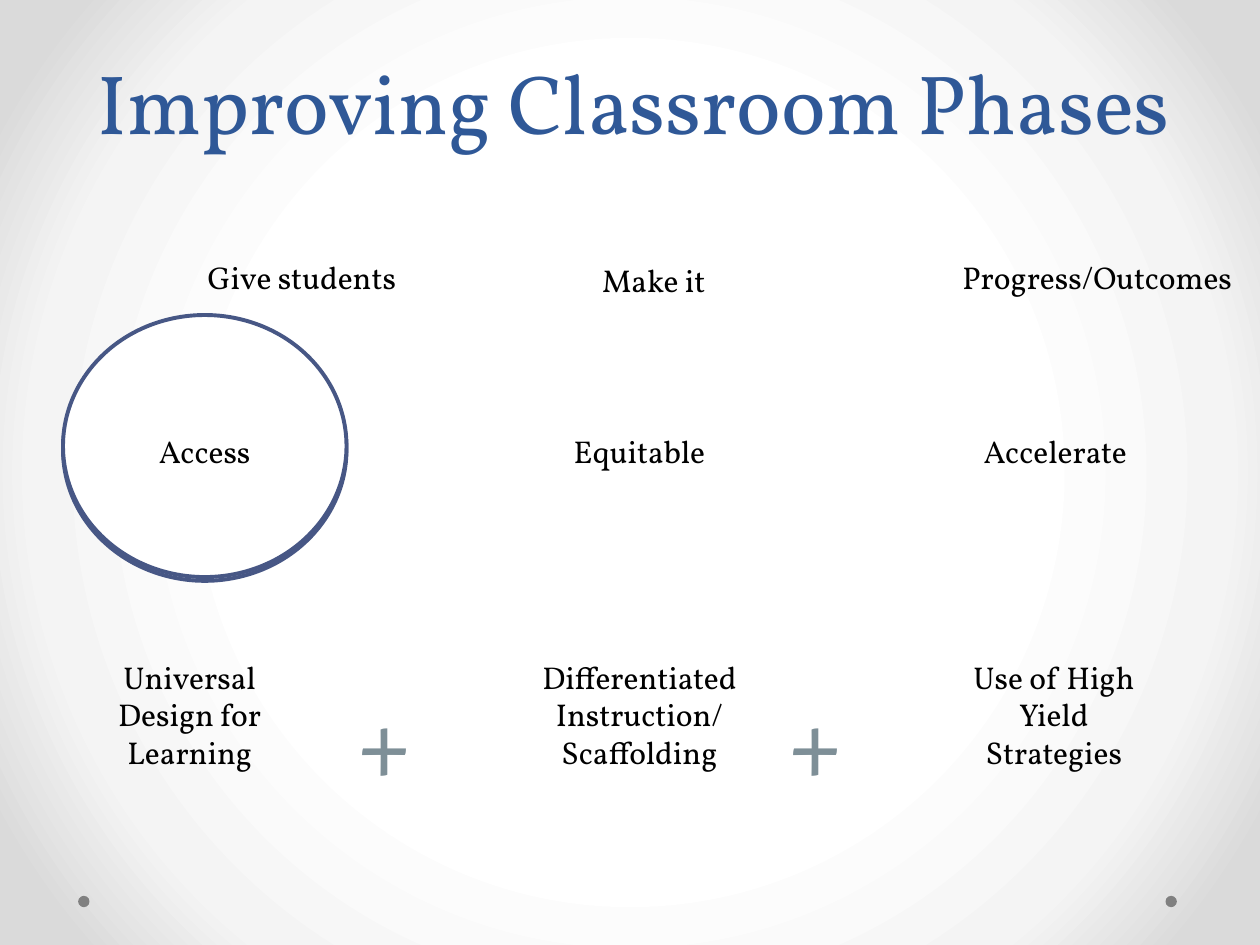
from pptx import Presentation
from pptx.dml.color import RGBColor
from pptx.enum.shapes import MSO_SHAPE
from pptx.enum.text import MSO_ANCHOR, PP_ALIGN
from pptx.oxml import parse_xml
from pptx.oxml.ns import nsdecls
from pptx.util import Inches, Pt

# Content
FONT = "Vollkorn"
TITLE = "Improving Classroom Phases"
BACKGROUND_STOPS = [(50, "FFFFFF"), (76, "F4F4F4"), (92, "DADADA")]

# Text, left, top, width
HEADINGS = [
    ("Give students", 1.55, 2, 1.82),
    ("Make it", 4.68, 2.02, 1.42),
    ("Progress/Outcomes", 7.54, 2, 2.42),
]
# Text, left
PHASES = [("Access", 0.79), ("Equitable", 4.24), ("Accelerate", 7.54)]
# Text, left, width
METHODS = [
    ("Universal Design for Learning", 0.67, 1.67),
    ("Differentiated Instruction/ Scaffolding", 4.09, 1.97),
    ("Use of High Yield Strategies", 7.53, 1.67),
]
PLUS_LEFTS = [2.75, 6.17]
DOT_LEFTS = [0.62, 9.25]
CIRCLE_TOPS = [2.53, 2.5]


def color(value):
    return RGBColor.from_string(value)


def add_text(text, left, top, width, height, size=18, text_color="000000",
             align=PP_ALIGN.CENTER, bold=False, wrap=True):
    box = slide.shapes.add_textbox(
        Inches(left), Inches(top), Inches(width), Inches(height))
    frame = box.text_frame
    frame.word_wrap = wrap
    paragraph = frame.paragraphs[0]
    paragraph.alignment = align
    run = paragraph.add_run()
    run.text = text
    run.font.name = FONT
    run.font.size = Pt(size)
    run.font.bold = bold
    run.font.color.rgb = color(text_color)
    return frame


def add_ellipse(left, top, width, height, fill, line=None):
    shape = slide.shapes.add_shape(
        MSO_SHAPE.OVAL, Inches(left), Inches(top), Inches(width), Inches(height))
    shape.shadow.inherit = False
    shape.fill.solid()
    shape.fill.fore_color.rgb = color(fill)
    if line:
        shape.line.color.rgb = color(line)
        shape.line.width = Pt(2.25)
    else:
        shape.line.fill.background()


def set_radial_background(stops):
    slide.background.fill.gradient()
    old_fill = slide.background._cSld.bg.bgPr[0]
    stop_xml = "".join(
        f'<a:gs pos="{position * 1000}"><a:srgbClr val="{value}"/></a:gs>'
        for position, value in stops)
    new_fill = parse_xml(
        f'<a:gradFill {nsdecls("a")} rotWithShape="1"><a:gsLst>{stop_xml}</a:gsLst>'
        '<a:path path="circle"><a:fillToRect l="50000" t="50000" r="50000" b="50000"/>'
        '</a:path></a:gradFill>')
    old_fill.getparent().replace(old_fill, new_fill)


presentation = Presentation()
presentation.slide_width = Inches(10)
presentation.slide_height = Inches(7.5)
slide = presentation.slides.add_slide(presentation.slide_layouts[6])

# Background and corner dots
set_radial_background(BACKGROUND_STOPS)
for left in DOT_LEFTS:
    add_ellipse(left, 7.11, 0.09, 0.09, "808080")

# Title
title = add_text(TITLE, 0.28, 0.25, 9.5, 1, size=48, text_color="2F5897")
title.vertical_anchor = MSO_ANCHOR.BOTTOM
title.paragraphs[0].line_spacing = Pt(58)

# Doubled circle behind the first phase
for top in CIRCLE_TOPS:
    add_ellipse(0.5, top, 2.25, 2.08, "FFFFFF", line="475785")

# Three columns of phases and methods
for text, left in PHASES:
    add_text(text, left, 3.38, 1.67, 0.4)
for text, left, width in METHODS:
    add_text(text, left, 5.17, width, 1.01)
for left in PLUS_LEFTS:
    add_text("+", left, 5.36, 0.58, 1.01, size=54, text_color="7E8F97",
             bold=True, wrap=False)
for text, left, top, width in HEADINGS:
    add_text(text, left, top, width, 0.4, align=PP_ALIGN.LEFT)

presentation.save("out.pptx")
